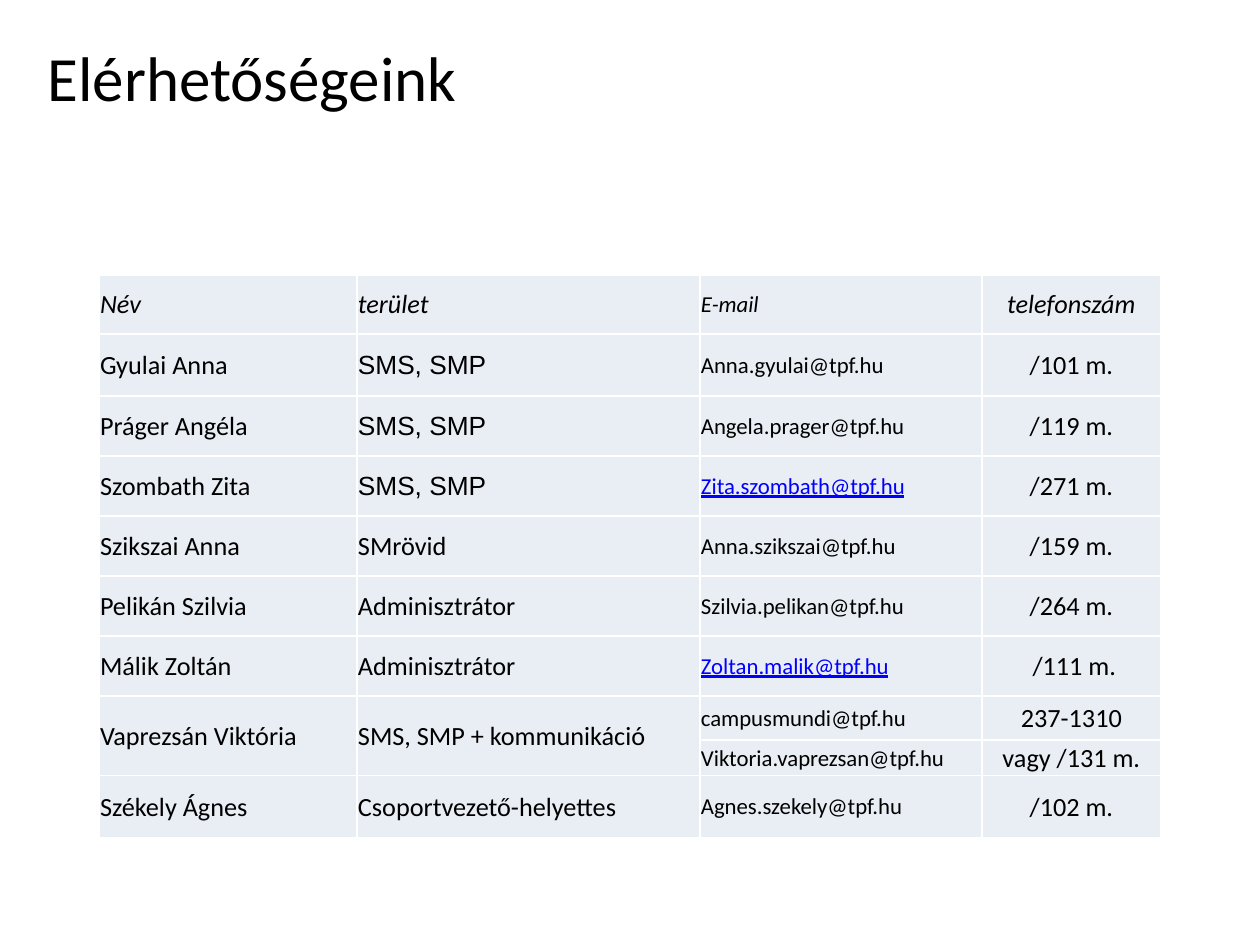
"""Build the contact list slide with its title and staff table."""
import lxml.etree
import pptx
import pptx.dml.color
import pptx.enum.text
import pptx.oxml.ns
import pptx.util

BLACK = pptx.dml.color.RGBColor(0x00, 0x00, 0x00)
WHITE = pptx.dml.color.RGBColor(0xFF, 0xFF, 0xFF)
LINK_BLUE = pptx.dml.color.RGBColor(0x00, 0x00, 0xFF)
CELL_FILL = pptx.dml.color.RGBColor(0xE9, 0xED, 0xF4)
PIXELS_PER_INCH = 126
COLUMN_WIDTHS = [258, 343, 282, 179]
ROW_HEIGHTS = [59, 62, 60, 60, 60, 60, 60, 44, 36, 62]
CONTACTS = [
    ("Név", "terület", "E-mail", "telefonszám"),
    ("Gyulai Anna", "SMS, SMP", "Anna.gyulai@tpf.hu", "/101 m."),
    ("Práger Angéla", "SMS, SMP", "Angela.prager@tpf.hu", "/119 m."),
    ("Szombath Zita", "SMS, SMP", "Zita.szombath@tpf.hu", "/271 m."),
    ("Szikszai Anna", "SMrövid", "Anna.szikszai@tpf.hu", "/159 m."),
    ("Pelikán Szilvia", "Adminisztrátor", "Szilvia.pelikan@tpf.hu", "/264 m."),
    ("Málik Zoltán", "Adminisztrátor", "Zoltan.malik@tpf.hu", " /111 m."),
    ("Vaprezsán Viktória", "SMS, SMP + kommunikáció", "campusmundi@tpf.hu", "237-1310"),
    ("", "", "Viktoria.vaprezsan@tpf.hu", "vagy /131 m."),
    ("Székely Ágnes", "Csoportvezető-helyettes", "Agnes.szekely@tpf.hu", "/102 m."),
]
LINKED_EMAILS = {"Zita.szombath@tpf.hu", "Zoltan.malik@tpf.hu"}
EMAIL_COLUMN, PHONE_COLUMN = 2, 3
MERGED_ROW = 7


def px(length):
    return pptx.util.Emu(round(length * 914400 / PIXELS_PER_INCH))


def add_borders(cell):
    properties = cell._tc.get_or_add_tcPr()
    for side in ("a:lnL", "a:lnR", "a:lnT", "a:lnB"):
        line = lxml.etree.SubElement(properties, pptx.oxml.ns.qn(side), w=str(pptx.util.Pt(1)))
        fill = lxml.etree.SubElement(line, pptx.oxml.ns.qn("a:solidFill"))
        lxml.etree.SubElement(fill, pptx.oxml.ns.qn("a:srgbClr"), val=str(WHITE))


presentation = pptx.Presentation()
presentation.slide_width, presentation.slide_height = px(1260), px(945)
slide = presentation.slides.add_slide(presentation.slide_layouts[5])

title = slide.shapes.title
title.left, title.top, title.width, title.height = px(35), px(38), px(1171), px(77)
title.text_frame.text = "Elérhetőségeink"
title.text_frame.vertical_anchor = pptx.enum.text.MSO_ANCHOR.MIDDLE
paragraph = title.text_frame.paragraphs[0]
paragraph.alignment = pptx.enum.text.PP_ALIGN.LEFT
paragraph.font.name = "Calibri"
paragraph.font.size = pptx.util.Pt(36)
paragraph.font.color.rgb = BLACK

table = slide.shapes.add_table(
    len(ROW_HEIGHTS), len(COLUMN_WIDTHS), px(99), px(275),
    px(sum(COLUMN_WIDTHS)), px(sum(ROW_HEIGHTS)),
).table
table.first_row = False
table.horz_banding = False
for column, width in zip(table.columns, COLUMN_WIDTHS):
    column.width = px(width)
for row, height in zip(table.rows, ROW_HEIGHTS):
    row.height = px(height)
for column_index in range(2):
    table.cell(MERGED_ROW, column_index).merge(table.cell(MERGED_ROW + 1, column_index))

for row_index, contact in enumerate(CONTACTS):
    for column_index, text in enumerate(contact):
        cell = table.cell(row_index, column_index)
        add_borders(cell)
        cell.fill.solid()
        cell.fill.fore_color.rgb = CELL_FILL
        cell.vertical_anchor = pptx.enum.text.MSO_ANCHOR.MIDDLE
        cell.margin_left = cell.margin_right = cell.margin_top = px(1)
        cell.margin_bottom = 0
        if cell.is_spanned:
            continue
        cell.text = text
        paragraph = cell.text_frame.paragraphs[0]
        if column_index == PHONE_COLUMN:
            paragraph.alignment = pptx.enum.text.PP_ALIGN.CENTER
        linked = text in LINKED_EMAILS
        paragraph.font.name = "Arial" if text == "SMS, SMP" else "Calibri"
        paragraph.font.size = pptx.util.Pt(13 if column_index == EMAIL_COLUMN else 15)
        paragraph.font.italic = row_index == 0
        paragraph.font.underline = linked
        paragraph.font.color.rgb = LINK_BLUE if linked else BLACK

presentation.save("out.pptx")
